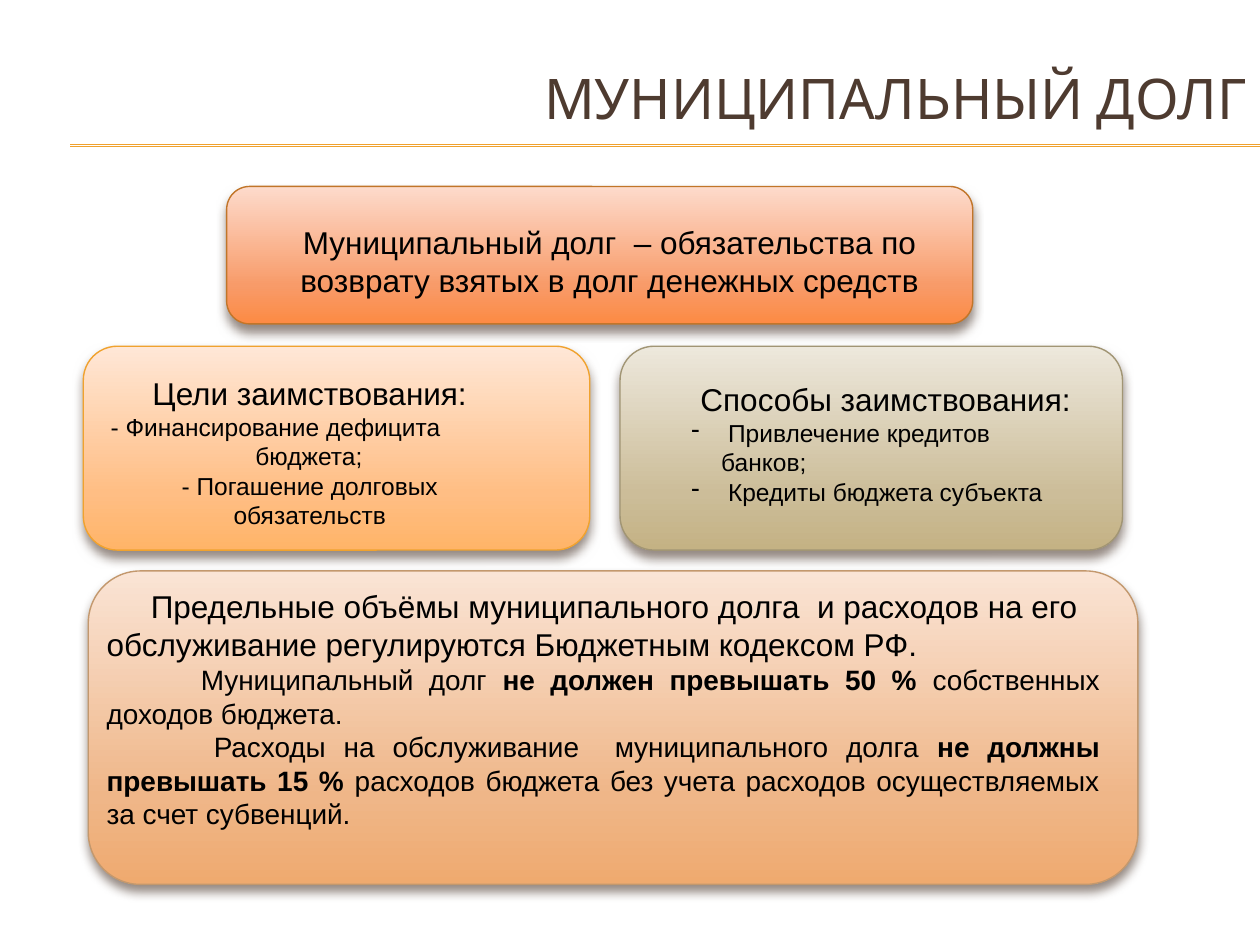
import copy

import pptx
import pptx.util
import pptx.dml.color
import pptx.enum.shapes
import pptx.enum.text
import pptx.oxml
import pptx.oxml.ns
import lxml.etree

Cm, Pt = pptx.util.Cm, pptx.util.Pt
RGB = pptx.dml.color.RGBColor.from_string
ALIGN = pptx.enum.text.PP_ALIGN
SHAPE = pptx.enum.shapes.MSO_SHAPE
qn = pptx.oxml.ns.qn

COLORS = {
    "title": "4E3B30", "text": "000000", "rule": "F0A22E", "shadow": "4E3B30",
    "limits": ("FAE4D5", "EFB688", "EFAA6F", "C3986D"),
    "methods": ("EDE8DC", "CCBD99", "C4B284", "A19574"),
    "goals": ("FFE7D7", "FFBE84", "FFB468", "F0A22E"),
    "definition": ("FDDBCC", "F89B69", "FC8A43", "C17529"),
}


def add_panel(s, name, box):
    """Rounded panel with a three-stop vertical gradient and a soft shadow."""
    sp = s.shapes.add_shape(SHAPE.ROUNDED_RECTANGLE, *map(Cm, box))
    *stops, line = COLORS[name]
    sp.fill.gradient()
    sp.fill.gradient_angle = 270
    gs_list = sp._element.spPr.find(".//" + qn("a:gsLst"))
    gs_list.append(copy.deepcopy(gs_list[-1]))
    for stop, color, pos in zip(sp.fill.gradient_stops, stops, (0, 0.72, 1)):
        stop.color.rgb = RGB(color)
        stop.position = pos
    sp.line.color.rgb = RGB(line)
    sp.line.width = Pt(0.79)
    sp.shadow.inherit = False
    effects = sp._element.spPr.find(qn("a:effectLst"))
    effects.append(pptx.oxml.parse_xml(
        '<a:outerShdw xmlns:a="http://schemas.openxmlformats.org/drawingml/2006/main" '
        f'blurRad="{Pt(6)}" dist="{Pt(4)}" dir="5400000" rotWithShape="0">'
        f'<a:srgbClr val="{COLORS["shadow"]}"><a:alpha val="60000"/></a:srgbClr></a:outerShdw>'))


def add_paragraph(p, size, align, runs, margin=0, indent=0, bullet=None):
    """Fill a paragraph; every second run is bold."""
    p.alignment = align
    pPr = p._p.get_or_add_pPr()
    pPr.set("marL", str(Cm(margin)))
    pPr.set("indent", str(Cm(indent)))
    if bullet:
        lxml.etree.SubElement(pPr, qn("a:buChar")).set("char", bullet)
    for i, text in enumerate(runs):
        r = p.add_run()
        r.text = text
        for key, value in {"name": "Arial", "size": Pt(size), "bold": i % 2 == 1}.items():
            setattr(r.font, key, value)
        r.font.color.rgb = RGB(COLORS["text"])


prs = pptx.Presentation()
prs.slide_width, prs.slide_height = Cm(25.4), Cm(19.05)
s = prs.slides.add_slide(prs.slide_layouts[5])

# Double rule under the title
for y in (2.92, 2.95):
    rule = s.shapes.add_connector(pptx.enum.shapes.MSO_CONNECTOR.STRAIGHT,
                                  Cm(1.42), Cm(y), Cm(25.4), Cm(y))
    rule.line.color.rgb = RGB(COLORS["rule"])
    rule.line.width = Pt(0.75)
    lxml.etree.SubElement(rule._element.spPr, qn("a:effectLst"))

# Title
title = s.shapes.title
for key, value in {"left": 2.54, "top": 0.58, "width": 22.86, "height": 2.77}.items():
    setattr(title, key, Cm(value))
tf = title.text_frame
tf.text = "МУНИЦИПАЛЬНЫЙ ДОЛГ"
tf.auto_size = pptx.enum.text.MSO_AUTO_SIZE.NONE
tf.vertical_anchor = pptx.enum.text.MSO_ANCHOR.MIDDLE
tf.paragraphs[0].alignment = ALIGN.RIGHT
font = tf.paragraphs[0].runs[0].font
for key, value in {"name": "Cabin", "size": Pt(32)}.items():
    setattr(font, key, value)
font.color.rgb = RGB(COLORS["title"])

# Panels
panels = {
    "limits": (1.78, 11.51, 21.16, 6.32),
    "methods": (12.5, 6.98, 10.13, 4.11),
    "goals": (1.68, 6.98, 10.21, 4.11),
    "definition": (4.57, 3.76, 15.04, 2.77),
}
for name, box in panels.items():
    add_panel(s, name, box)

# Texts: box, then size, alignment, runs and indents of each paragraph
dash = {"margin": 0.6, "indent": -0.6, "bullet": "-"}
texts = [
    ((4.95, 4.37, 14.68, 1.8), [
        (18, ALIGN.CENTER, ["Муниципальный долг  – обязательства по возврату "
                            "взятых в долг денежных средств"], {}),
    ]),
    ((1.9, 7.42, 8.69, 2.82), [
        (18, ALIGN.CENTER, ["Цели заимствования:"], {}),
        (14, ALIGN.LEFT, ["- Финансирование дефицита бюджета;"],
         {"margin": 3, "indent": -2.92}),
        (14, ALIGN.CENTER, ["- Погашение долговых обязательств"], {}),
    ]),
    ((13.69, 7.54, 8.33, 2.24), [
        (18, ALIGN.CENTER, ["Способы заимствования:"], {}),
        (14, ALIGN.LEFT, [" Привлечение кредитов банков;"], dash),
        (14, ALIGN.LEFT, [" Кредиты бюджета субъекта"], dash),
    ]),
    ((1.9, 11.71, 20.52, 5.21), [
        (18, ALIGN.LEFT, ["Предельные объёмы муниципального долга  и расходов на его "
                          "обслуживание регулируются Бюджетным кодексом РФ."],
         {"indent": 0.89}),
        (16, ALIGN.JUSTIFY, ["Муниципальный долг ", "не должен превышать 50 % ",
                             "собственных доходов бюджета."], {"indent": 1.9}),
        (16, ALIGN.JUSTIFY, ["Расходы на обслуживание  муниципального долга ",
                             "не должны превышать 15 % ",
                             "расходов бюджета без учета расходов осуществляемых "
                             "за счет субвенций."], {"indent": 2.16}),
    ]),
]
for box, paragraphs in texts:
    tf = s.shapes.add_textbox(*map(Cm, box)).text_frame
    tf.word_wrap = True
    for i, (size, align, runs, indents) in enumerate(paragraphs):
        p = tf.add_paragraph() if i else tf.paragraphs[0]
        add_paragraph(p, size, align, runs, **indents)

prs.save("out.pptx")
